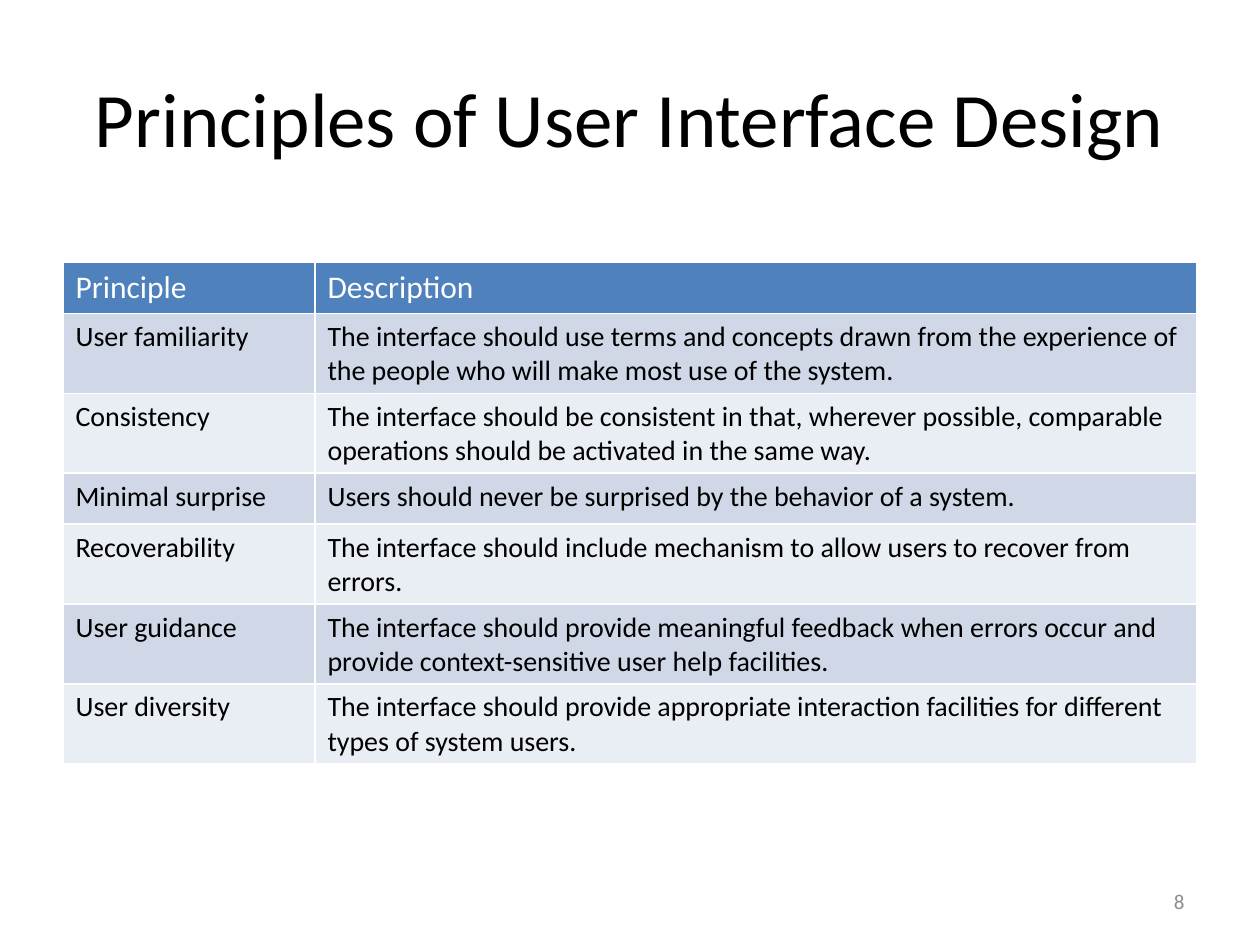
from lxml import etree
from pptx import Presentation
from pptx.dml.color import RGBColor
from pptx.enum.text import MSO_ANCHOR, PP_ALIGN
from pptx.oxml.ns import qn
from pptx.util import Cm, Pt

LEFT, CENTER, RIGHT = PP_ALIGN.LEFT, PP_ALIGN.CENTER, PP_ALIGN.RIGHT
MIDDLE = MSO_ANCHOR.MIDDLE
BLACK = RGBColor(0x00, 0x00, 0x00)
WHITE = RGBColor(0xFF, 0xFF, 0xFF)
GRAY = RGBColor(0x8C, 0x8C, 0x8C)
HEADER_BLUE = RGBColor(0x4F, 0x81, 0xBD)
BANDS = (RGBColor(0xE9, 0xED, 0xF4), RGBColor(0xD0, 0xD8, 0xE8))
FONT = "Calibri"

COLUMN_WIDTHS = (Cm(5.08), Cm(17.78))
ROW_HEIGHT = Cm(1.03)
PRINCIPLES = [
    ("Principle", "Description"),
    ("User familiarity",
     "The interface should use terms and concepts drawn from the experience of "
     "the people who will make most use of the system."),
    ("Consistency",
     "The interface should be consistent in that, wherever possible, comparable "
     "operations should be activated in the same way."),
    ("Minimal surprise",
     "Users should never be surprised by the behavior of a system."),
    ("Recoverability",
     "The interface should include mechanism to allow users to recover from errors."),
    ("User guidance",
     "The interface should provide meaningful feedback when errors occur and "
     "provide context-sensitive user help facilities."),
    ("User diversity",
     "The interface should provide appropriate interaction facilities for "
     "different types of system users."),
]


def write_text(tf, text, size=16, color=BLACK, align=LEFT):
    """Write one formatted paragraph into a text frame."""
    p = tf.paragraphs[0]
    p.alignment = align
    r = p.add_run()
    r.text = text
    r.font.name = FONT
    r.font.size = Pt(size)
    r.font.bold = False
    r.font.color.rgb = color


def add_text(s, left, top, width, height, text, **style):
    """Add a vertically centred text box."""
    tf = s.shapes.add_textbox(left, top, width, height).text_frame
    tf.word_wrap = True
    tf.vertical_anchor = MIDDLE
    write_text(tf, text, **style)


def set_borders(cell, color=WHITE, width=Pt(1)):
    """Draw a solid line on each side of a table cell."""
    tc_pr = cell._tc.get_or_add_tcPr()
    for side in ("a:lnL", "a:lnR", "a:lnT", "a:lnB"):
        ln = etree.SubElement(tc_pr, qn(side), w=str(width))
        fill = etree.SubElement(ln, qn("a:solidFill"))
        etree.SubElement(fill, qn("a:srgbClr"), val=str(color))


def add_principles_table(s, left, top):
    """Add the table with a blue header and banded rows."""
    table = s.shapes.add_table(len(PRINCIPLES), len(COLUMN_WIDTHS), left, top,
                               sum(COLUMN_WIDTHS), ROW_HEIGHT * len(PRINCIPLES)).table
    for column, width in zip(table.columns, COLUMN_WIDTHS):
        column.width = width
    for i, texts in enumerate(PRINCIPLES):
        style = {"size": 16} if i else {"size": 18, "color": WHITE}
        for cell, text in zip(table.rows[i].cells, texts):
            set_borders(cell)
            cell.fill.solid()
            cell.fill.fore_color.rgb = BANDS[i % 2] if i else HEADER_BLUE
            write_text(cell.text_frame, text, **style)


def main():
    """Build and save the slide."""
    prs = Presentation()
    prs.slide_width, prs.slide_height = Cm(25.4), Cm(19.05)
    s = prs.slides.add_slide(prs.slide_layouts[6])
    add_text(s, Cm(1.27), Cm(0.76), Cm(22.86), Cm(3.18),
             "Principles of User Interface Design", size=44, align=CENTER)
    add_principles_table(s, Cm(1.27), Cm(5.29))
    add_text(s, Cm(18.2), Cm(17.66), Cm(5.93), Cm(1.01), "8",
             size=12, color=GRAY, align=RIGHT)
    prs.save("out.pptx")


if __name__ == "__main__":
    main()
